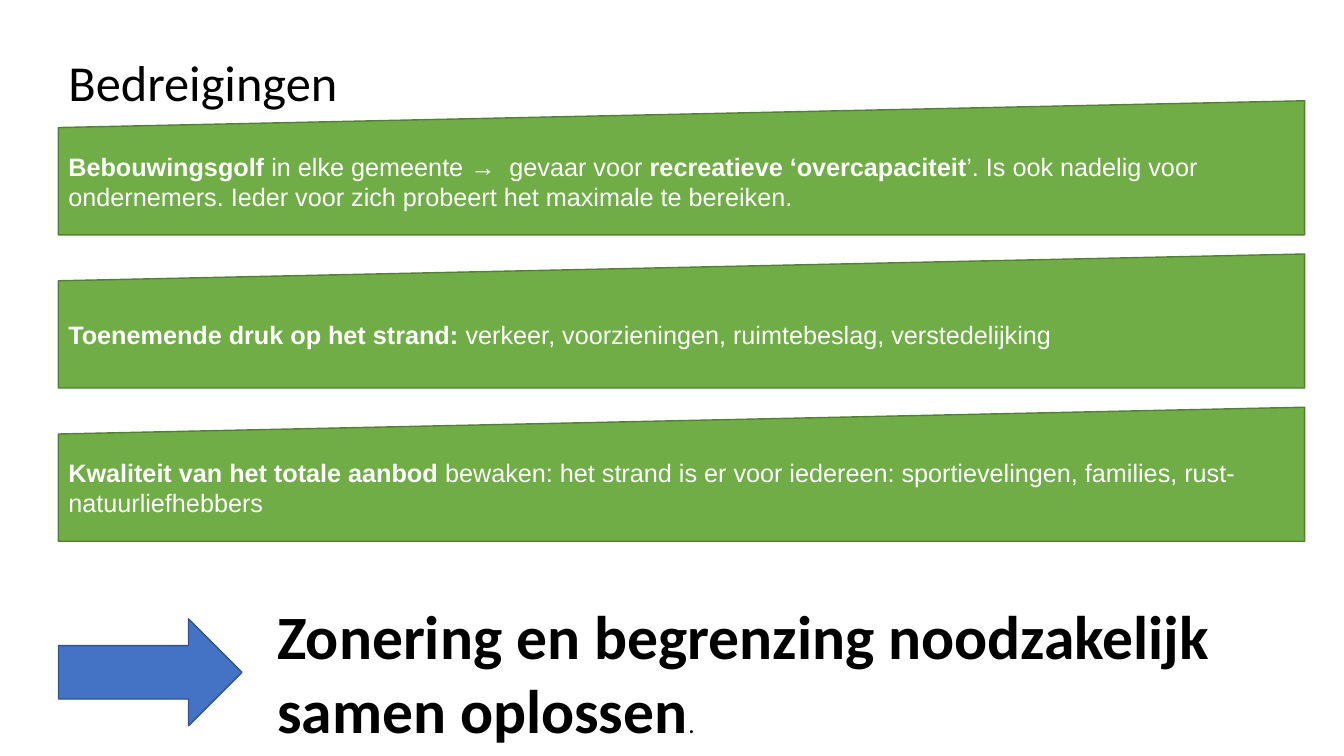
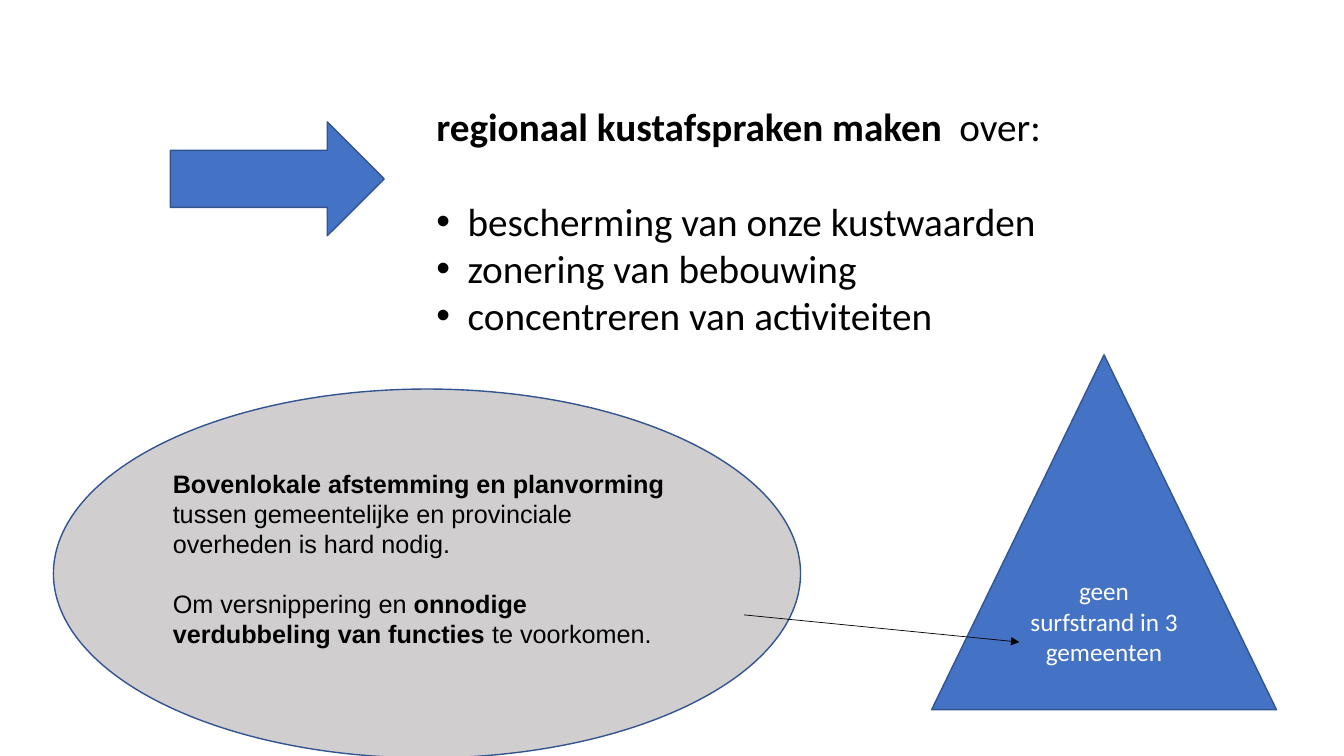
from lxml.etree import SubElement
from pptx import Presentation
from pptx.dml.color import RGBColor
from pptx.enum.shapes import MSO_CONNECTOR, MSO_SHAPE
from pptx.enum.text import MSO_ANCHOR, PP_ALIGN
from pptx.oxml.ns import qn
from pptx.util import Emu, Pt

# Shared look
EMU_PER_PX = 9144  # 100 px to the inch
BLACK, WHITE = "000000", "FFFFFF"
BLUE, BLUE_EDGE = "4472C4", "325491"
GREEN, GREEN_EDGE = "70AD47", "538035"
GREY = "D0CECE"
HEADING, BODY = "Calibri", "Arial"

# Bands: same left, width and height, one constant step
BAND_LEFT, BAND_TOP, BAND_WIDTH, BAND_HEIGHT, BAND_STEP = 58, 100, 1236, 133, 152
THREATS = [
    [("Bebouwingsgolf", True),
     (" in elke gemeente →  gevaar voor ", False),
     ("recreatieve ‘overcapaciteit", True),
     ("’. Is ook nadelig voor ondernemers. Ieder voor zich probeert "
      "het maximale te bereiken.", False)],
    [("Toenemende druk op het strand: ", True),
     ("verkeer, voorzieningen, ruimtebeslag, verstedelijking", False)],
    [("Kwaliteit van het totale aanbod ", True),
     ("bewaken: het strand is er voor iedereen: sportievelingen, families, "
      "rust-natuurliefhebbers", False)],
]
AGREEMENTS = [
    "bescherming van onze kustwaarden",
    "zonering van bebouwing",
    "concentreren van activiteiten",
]


def px(length):
    return Emu(length * EMU_PER_PX)


def color(value):
    return RGBColor.from_string(value)


def write(box, paragraphs, size, font, ink, align=PP_ALIGN.LEFT):
    """Each paragraph is a list of (text, bold) or (text, bold, size) runs."""
    frame = box.text_frame
    frame.word_wrap = True
    for index, spans in enumerate(paragraphs):
        para = frame.add_paragraph() if index else frame.paragraphs[0]
        para.alignment = align
        for text, bold, *own_size in spans:
            span = para.add_run()
            span.text = text
            span.font.name = font
            span.font.size = Pt(own_size[0] if own_size else size)
            span.font.bold = bold
            span.font.color.rgb = color(ink)
    return frame


def add_text(page, left, top, width, height, paragraphs, size):
    box = page.shapes.add_textbox(px(left), px(top), px(width), px(height))
    return write(box, paragraphs, size, HEADING, BLACK)


def add_figure(page, kind, left, top, width, height, fill=BLUE, edge=BLUE_EDGE):
    shape = page.shapes.add_shape(kind, px(left), px(top), px(width), px(height))
    shape.shadow.inherit = False
    shape.fill.solid()
    shape.fill.fore_color.rgb = color(fill)
    shape.line.color.rgb = color(edge)
    shape.line.width = Pt(1)
    shape.text_frame.vertical_anchor = MSO_ANCHOR.MIDDLE
    return shape


def add_arrow_line(page, start, end):
    line = page.shapes.add_connector(
        MSO_CONNECTOR.STRAIGHT, *(px(value) for value in start + end))
    line.line.color.rgb = color(BLACK)
    line.line.width = Pt(0.5)
    SubElement(line.line._get_or_add_ln(), qn("a:tailEnd"), type="triangle")
    SubElement(line._element.spPr, qn("a:effectLst"))


def add_bullet(para, indent):
    properties = para._p.get_or_add_pPr()
    properties.set("marL", str(px(indent)))
    properties.set("indent", str(-px(indent)))
    SubElement(properties, qn("a:buFont"), typeface="Arial")
    SubElement(properties, qn("a:buChar"), char="•")


def build_threats(page):
    # Three slanted bands
    for index, spans in enumerate(THREATS):
        band = add_figure(page, MSO_SHAPE.FLOWCHART_MANUAL_INPUT, BAND_LEFT,
                          BAND_TOP + index * BAND_STEP, BAND_WIDTH, BAND_HEIGHT,
                          GREEN, GREEN_EDGE)
        write(band, [spans], 18, BODY, WHITE)

    # Title
    add_text(page, 58, 46, 878, 71, [[("Bedreigingen", False)]], 36)

    # Conclusion
    add_figure(page, MSO_SHAPE.RIGHT_ARROW, 58, 614, 182, 106)
    conclusion = add_text(page, 251, 588, 1028, 158, [
        [("Zonering en begrenzing noodzakelijk", True)],
        [("samen oplossen", True), (".", False, 18)],
    ], 44)
    conclusion.margin_left = px(24)


def build_agreements(page):
    # Call for coordination
    ellipse = add_figure(page, MSO_SHAPE.OVAL, 53, 386, 741, 366, GREY)
    frame = write(ellipse, [
        [("Bovenlokale afstemming en planvorming ", True),
         ("tussen gemeentelijke en provinciale overheden is hard nodig.", False)],
        [("Om versnippering en ", False),
         ("onnodige verdubbeling van functies ", True),
         ("te voorkomen.", False)],
    ], 18, BODY, BLACK)
    frame.paragraphs[0].space_after = Pt(21)
    frame.margin_bottom = px(35)

    # Example
    triangle = add_figure(page, MSO_SHAPE.ISOSCELES_TRIANGLE, 924, 352, 342, 352)
    write(triangle, [[("geen surfstrand in 3 gemeenten", False)]],
          18, HEADING, WHITE, PP_ALIGN.CENTER)
    add_arrow_line(page, (738, 610), (1011, 637))

    # Agreements to make
    frame = add_text(page, 423, 97, 629, 337, [
        [("regionaal kustafspraken maken  ", True), ("over:", False)],
        *([(item, False)] for item in AGREEMENTS),
    ], 28)
    frame.paragraphs[0].space_after = Pt(34)
    for para in frame.paragraphs[1:]:
        add_bullet(para, 31)
    add_figure(page, MSO_SHAPE.RIGHT_ARROW, 169, 121, 212, 113)


def main():
    deck = Presentation()
    deck.slide_width, deck.slide_height = px(1333), px(750)
    blank = deck.slide_layouts[6]
    for build in (build_threats, build_agreements):
        build(deck.slides.add_slide(blank))
    deck.save("out.pptx")


if __name__ == "__main__":
    main()
